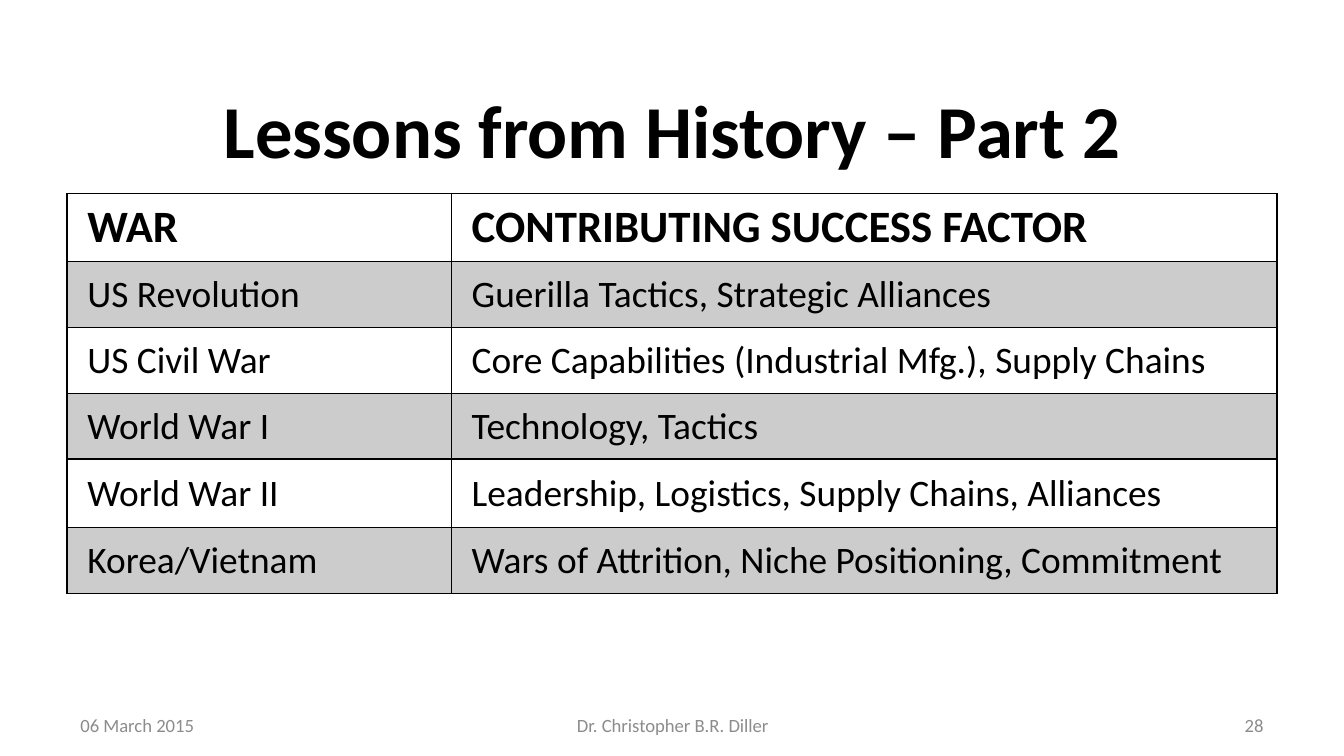
from dataclasses import dataclass

from lxml import etree
from pptx import Presentation
from pptx import util as u
from pptx.dml.color import RGBColor
from pptx.enum import text
from pptx.oxml import ns

WIDTH = u.Inches(10)
HEIGHT = WIDTH * 9 // 16
MARGIN = 0.05
FONT = "Calibri"
BLACK = RGBColor(0x00, 0x00, 0x00)
GREY = RGBColor(0x8C, 0x8C, 0x8C)
BAND_ALPHA = 20
BORDER = u.Pt(1)
COLUMNS = (2.86, 6.14)
ROW_HEIGHTS = (0.5, 0.49, 0.49, 0.49, 0.51, 0.49)
ROWS = (
    ("WAR", "CONTRIBUTING SUCCESS FACTOR"),
    ("US Revolution", "Guerilla Tactics, Strategic Alliances"),
    ("US Civil War", "Core Capabilities (Industrial Mfg.), Supply Chains"),
    ("World War I", "Technology, Tactics"),
    ("World War II", "Leadership, Logistics, Supply Chains, Alliances"),
    ("Korea/Vietnam", "Wars of Attrition, Niche Positioning, Commitment"),
)


@dataclass(frozen=True)
class Label:
    """A line of text placed by shares of the slide's size."""

    words: str
    left: float
    top: float
    width: float
    height: float
    align: text.PP_ALIGN
    size: int = 10
    color: RGBColor = GREY
    bold: bool = False


FOOTER = {"top": 0.941, "height": 0.036}
LABELS = (
    Label("Lessons from History – Part 2", MARGIN, 0.107, 1 - 2 * MARGIN, 0.126,
          text.PP_ALIGN.CENTER, 40, BLACK, True),
    Label("06 March 2015", MARGIN, width=0.233, align=text.PP_ALIGN.LEFT, **FOOTER),
    Label("Dr. Christopher B.R. Diller", 0.342, width=0.317,
          align=text.PP_ALIGN.CENTER, **FOOTER),
    Label("28", 0.717, width=0.233, align=text.PP_ALIGN.RIGHT, **FOOTER),
)


def style(p, size: int, color: RGBColor, bold: bool) -> None:
    """Set the font of a paragraph."""
    p.font.name, p.font.size, p.font.bold = FONT, u.Pt(size), bold
    p.font.color.rgb = color


def draw_label(s, label: Label) -> None:
    """Add a label as a vertically centred text box."""
    sp = s.shapes.add_textbox(
        int(label.left * WIDTH), int(label.top * HEIGHT),
        int(label.width * WIDTH), int(label.height * HEIGHT))
    tf = sp.text_frame
    tf.word_wrap = True
    tf.vertical_anchor = text.MSO_ANCHOR.MIDDLE
    tf.margin_top = tf.margin_bottom = 0
    p = tf.paragraphs[0]
    p.text, p.alignment = label.words, label.align
    style(p, label.size, label.color, label.bold)


def add_borders(cell) -> None:
    """Rule all four sides of a cell."""
    props = cell._tc.get_or_add_tcPr()
    for side in "LRTB":
        line = etree.SubElement(props, ns.qn(f"a:ln{side}"), w=str(BORDER))
        fill = etree.SubElement(line, ns.qn("a:solidFill"))
        etree.SubElement(fill, ns.qn("a:srgbClr"), val=str(BLACK))


def fill_cell(cell, banded: bool) -> None:
    """Give a cell a translucent band or no fill."""
    if not banded:
        cell.fill.background()
        return
    cell.fill.solid()
    cell.fill.fore_color.rgb = BLACK
    color = cell._tc.tcPr.find(f"{ns.qn('a:solidFill')}/{ns.qn('a:srgbClr')}")
    etree.SubElement(color, ns.qn("a:alpha"), val=str(BAND_ALPHA * 1000))


def draw_table(s) -> None:
    """Add the table of wars and success factors."""
    table = s.shapes.add_table(
        len(ROWS), len(COLUMNS), int(MARGIN * WIDTH), u.Inches(1.44),
        u.Inches(sum(COLUMNS)), u.Inches(sum(ROW_HEIGHTS))).table
    table.first_row = table.horz_banding = False
    for column, width in zip(table.columns, COLUMNS):
        column.width = u.Inches(width)
    for i, (row, height) in enumerate(zip(table.rows, ROW_HEIGHTS)):
        row.height = u.Inches(height)
        for cell, words in zip(row.cells, ROWS[i]):
            cell.vertical_anchor = text.MSO_ANCHOR.MIDDLE
            cell.margin_left = u.Inches(0.15)
            cell.margin_right = cell.margin_top = cell.margin_bottom = u.Inches(0.05)
            add_borders(cell)
            fill_cell(cell, i % 2 == 1)
            p = cell.text_frame.paragraphs[0]
            p.text = words
            style(p, 24 if i == 0 else 20, BLACK, i == 0)


def main() -> None:
    """Build and save the slide."""
    prs = Presentation()
    prs.slide_width, prs.slide_height = WIDTH, HEIGHT
    s = prs.slides.add_slide(prs.slide_layouts[6])
    draw_table(s)
    for label in LABELS:
        draw_label(s, label)
    prs.save("out.pptx")


if __name__ == "__main__":
    main()
